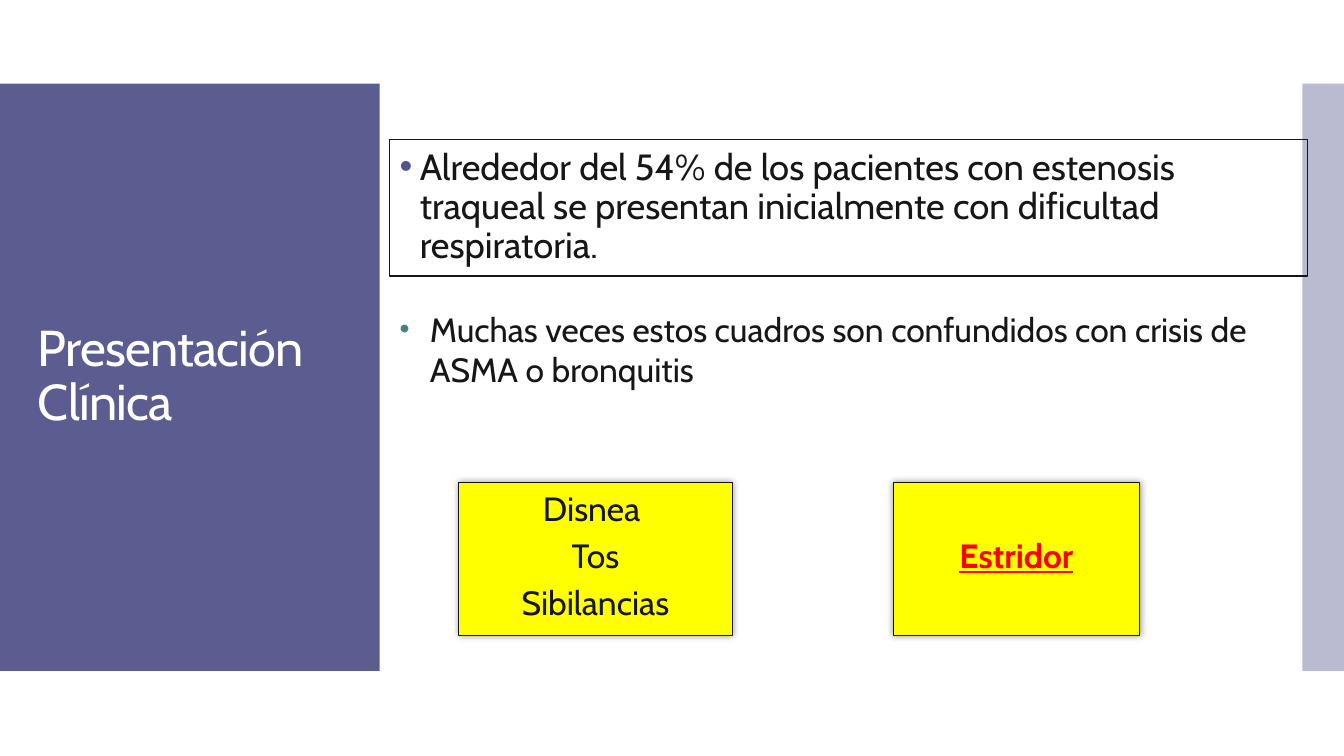
from dataclasses import dataclass

from lxml import etree
from pptx import Presentation
from pptx.dml.color import RGBColor
from pptx.enum.shapes import MSO_SHAPE
from pptx.enum.text import MSO_ANCHOR, PP_ALIGN
from pptx.oxml import parse_xml
from pptx.oxml.ns import qn
from pptx.util import Pt

RECTANGLE = MSO_SHAPE.RECTANGLE
MIDDLE, TOP = MSO_ANCHOR.MIDDLE, MSO_ANCHOR.TOP
CENTER, LEFT = PP_ALIGN.CENTER, PP_ALIGN.LEFT


@dataclass(frozen=True)
class Theme:
    font: str = "Cabin"
    purple: str = "53548A"
    teal: str = "438086"
    ink: str = "161616"
    white: str = "FFFFFF"
    yellow: str = "FFFF00"
    red: str = "FF0000"
    title_size: int = 36
    lead_size: int = 26
    body_size: int = 24


theme = Theme()


def add_box(area, fill=None, line=None):
    """Add a plain rectangle; area is left, top, width, height in points."""
    box = page.shapes.add_shape(RECTANGLE, *map(Pt, area))
    box.shadow.inherit = False
    if fill:
        box.fill.solid()
        box.fill.fore_color.rgb = RGBColor.from_string(fill)
    else:
        box.fill.background()
    if line:
        box.line.color.rgb = RGBColor.from_string(line)
        box.line.width = Pt(0.75)
    else:
        box.line.fill.background()
    return box


def write(box, lines, size, color, align=LEFT, anchor=MIDDLE, spacing=1.0,
          bullet=None):
    """Fill a box with paragraphs; bullet is colour, indent, size percent."""
    frame = box.text_frame
    frame.word_wrap = True
    frame.vertical_anchor = anchor
    for index, line in enumerate(lines):
        para = frame.paragraphs[0] if index == 0 else frame.add_paragraph()
        para.text = line
        para.alignment = align
        para.line_spacing = spacing
        para.space_before = Pt(0.2 * size if index else 0)
        para.font.name = theme.font
        para.font.size = Pt(size)
        para.font.color.rgb = RGBColor.from_string(color)
        if bullet:
            bullet_color, indent, percent = bullet
            props = para._p.get_or_add_pPr()
            props.set("marL", str(Pt(indent)))
            props.set("indent", str(-Pt(indent)))
            marks = [
                ("a:buClr", {}),
                ("a:buSzPct", {"val": str(percent * 1000)}),
                ("a:buFont", {"typeface": "Arial"}),
                ("a:buChar", {"char": "•"}),
            ]
            defaults = props.find(qn("a:defRPr"))
            for tag, attributes in marks:
                mark = etree.Element(qn(tag), attributes)
                if tag == "a:buClr":
                    etree.SubElement(mark, qn("a:srgbClr"), val=bullet_color)
                if defaults is None:
                    props.append(mark)
                else:
                    defaults.addprevious(mark)
    return frame


deck = Presentation()
deck.slide_width, deck.slide_height = Pt(960), Pt(540)
page = deck.slides.add_slide(deck.slide_layouts[6])

# Side panels, partly transparent
for left, width, opacity in [(0, 271.2, 95), (930.4, 29.6, 40)]:
    panel = add_box((left, 59.8, width, 419.5), theme.purple)
    tint = panel._element.spPr.find(qn("a:solidFill"))[0]
    etree.SubElement(tint, qn("a:alpha"), val=str(opacity * 1000))

# Title
title = page.shapes.add_textbox(Pt(20), Pt(88.5), Pt(232), Pt(362))
frame = write(title, ["Presentación Clínica"], theme.title_size, theme.white,
              spacing=0.9)
frame.paragraphs[0].runs[0].font._element.set("spc", "-60")

# Framed lead statement
lead = add_box((278.4, 99.8, 655.6, 97.4), line=theme.ink)
write(lead, ["Alrededor del 54% de los pacientes con estenosis traqueal se "
             "presentan inicialmente con dificultad respiratoria."],
      theme.lead_size, theme.ink, spacing=0.9,
      bullet=(theme.purple, 14.4, 100))

# Symptom boxes with a soft shadow
symptoms = [
    (327.6, 195.4, ["Disnea ", "Tos", "Sibilancias"], theme.ink),
    (638.1, 175.9, ["Estridor"], theme.red),
]
for left, width, names, color in symptoms:
    box = add_box((left, 344.4, width, 109.4), theme.yellow, theme.ink)
    effects = box._element.spPr.find(qn("a:effectLst"))
    effects.append(parse_xml(
        '<a:outerShdw xmlns:a="http://schemas.openxmlformats.org/drawingml/2006/main"'
        f' blurRad="{Pt(5)}" dist="0" algn="ctr" rotWithShape="0">'
        '<a:srgbClr val="000000"><a:alpha val="40000"/></a:srgbClr>'
        '</a:outerShdw>'))
    frame = write(box, names, theme.body_size, color, CENTER)
    frame.margin_bottom = Pt(8.8)
    if color == theme.red:
        frame.paragraphs[0].font.bold = True
        frame.paragraphs[0].font.underline = True

# Note on misdiagnosis
note = page.shapes.add_textbox(Pt(278.4), Pt(217), Pt(638), Pt(60))
write(note, ["Muchas veces estos cuadros son confundidos con crisis de ASMA "
             "o bronquitis"],
      theme.body_size, theme.ink, anchor=TOP, bullet=(theme.teal, 21.6, 85))

deck.save("out.pptx")
